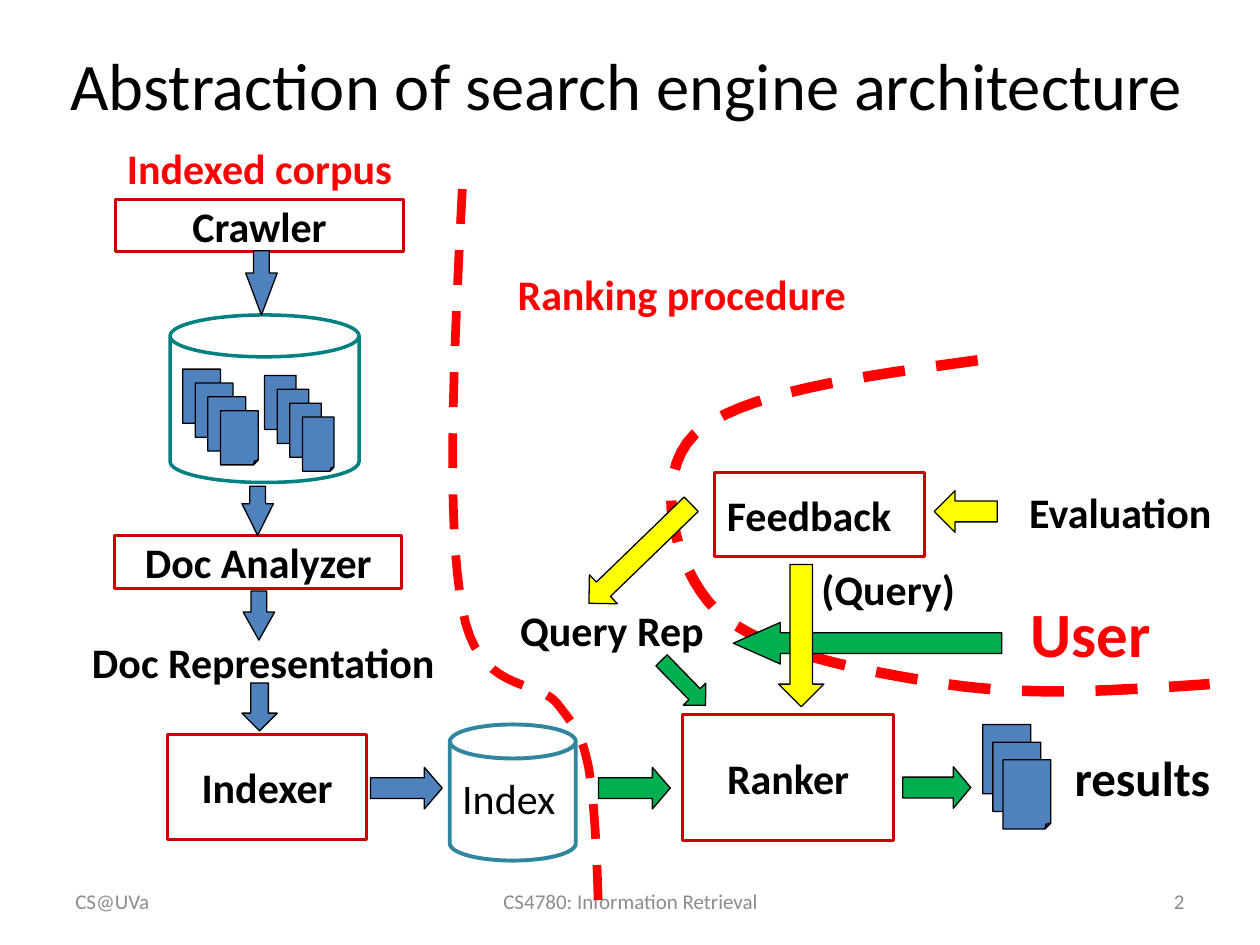
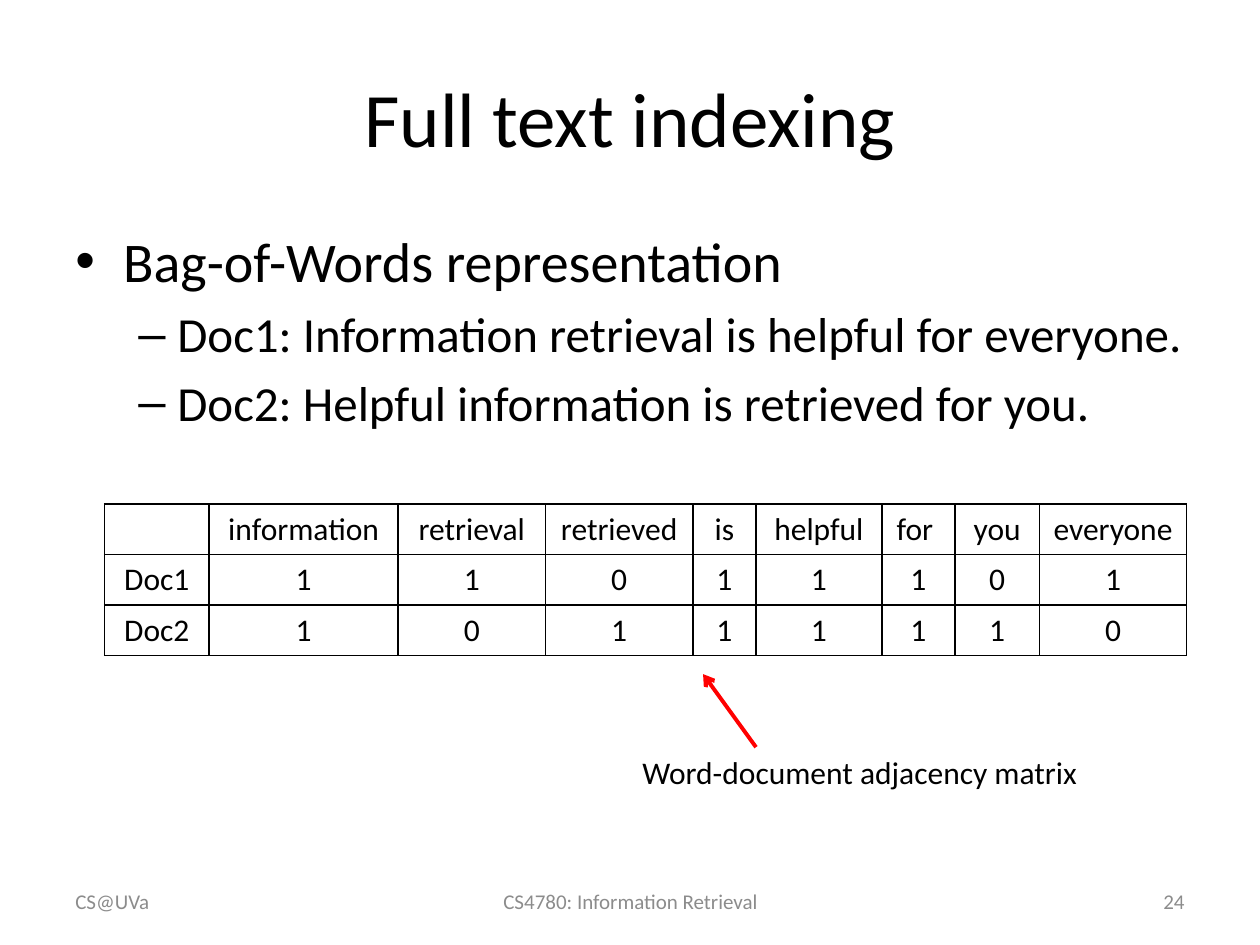
import pptx
import pptx.dml.color
import pptx.enum.dml
import pptx.enum.shapes
import pptx.enum.text
import pptx.oxml
import pptx.oxml.ns
import pptx.util
from lxml import etree

Inches = pptx.util.Inches
Pt = pptx.util.Pt
RGB = pptx.dml.color.RGBColor
SHAPE = pptx.enum.shapes.MSO_SHAPE
ALIGN = pptx.enum.text.PP_ALIGN
ANCHOR = pptx.enum.text.MSO_ANCHOR
qn = pptx.oxml.ns.qn

BLACK = RGB(0x00, 0x00, 0x00)
RED = RGB(0xFF, 0x00, 0x00)
BOX_RED = RGB(0xCC, 0x00, 0x00)
BLUE = RGB(0x4F, 0x81, 0xBD)
GREEN = RGB(0x00, 0xB0, 0x50)
YELLOW = RGB(0xFF, 0xFF, 0x00)
TEAL = RGB(0x00, 0x80, 0x80)
AQUA = RGB(0x31, 0x85, 0x9C)
GRAY = RGB(0x8C, 0x8C, 0x8C)
FONT = "Calibri"


def add_run(p, text, size, color=BLACK, bold=False):
    r = p.add_run()
    r.text = text
    r.font.name = FONT
    r.font.size = Pt(size)
    r.font.bold = bold
    r.font.color.rgb = color


class Region:
    """Places parts on a slide relative to a left top corner."""

    def __init__(self, s, left=0, top=0):
        self.s, self.left, self.top = s, left, top

    def place(self, box):
        x, y, w, h = box
        return Inches(self.left + x), Inches(self.top + y), Inches(w), Inches(h)

    def text(self, text, box, size=24, color=BLACK, bold=True,
             align=ALIGN.LEFT, anchor=ANCHOR.TOP, wrap=True):
        tf = self.s.shapes.add_textbox(*self.place(box)).text_frame
        tf.word_wrap = wrap
        tf.vertical_anchor = anchor
        p = tf.paragraphs[0]
        p.alignment = align
        add_run(p, text, size, color, bold)

    def shape(self, kind, box, fill=None, line=BLACK, width=0.75):
        sp = self.s.shapes.add_shape(kind, *self.place(box))
        sp.shadow.inherit = False
        if fill is None:
            sp.fill.background()
        else:
            sp.fill.solid()
            sp.fill.fore_color.rgb = fill
        sp.line.color.rgb = line
        sp.line.width = Pt(width)
        return sp

    def step(self, label, box, align=ALIGN.CENTER):
        sp = self.shape(SHAPE.RECTANGLE, box, line=BOX_RED, width=1.75)
        tf = sp.text_frame
        tf.word_wrap = False
        tf.vertical_anchor = ANCHOR.MIDDLE
        p = tf.paragraphs[0]
        p.alignment = align
        add_run(p, label, 24, bold=True)

    def arrow(self, box, fill=BLUE, rotation=0, head=0.5):
        sp = self.shape(SHAPE.DOWN_ARROW, box, fill)
        sp.adjustments[0], sp.adjustments[1] = 0.5, head
        sp.rotation = rotation

    def pages(self, count, box, dx, dy):
        x, y, w, h = box
        for i in range(count):
            sp = self.shape(SHAPE.FOLDED_CORNER, (x + i * dx, y + i * dy, w, h), BLUE)
            # python-pptx knows no adjustment for this shape
            guides = sp._element.spPr.find(qn("a:prstGeom")).find(qn("a:avLst"))
            etree.SubElement(guides, qn("a:gd"), name="adj", fmla="val 12500")

    def divider(self, start, curves, width):
        """Dashed line through cubic curves, each two controls and an end."""
        points, p0 = [], start
        for p1, p2, p3 in curves:
            for i in range(1, 17):
                t = i / 16
                u = 1 - t
                points.append(tuple(
                    Inches(u**3 * a + 3 * u * u * t * b + 3 * u * t * t * c + t**3 * d)
                    for a, b, c, d in zip(p0, p1, p2, p3)))
            p0 = p3
        fb = self.s.shapes.build_freeform(Inches(start[0]), Inches(start[1]))
        fb.add_line_segments(points, close=False)
        sp = fb.convert_to_shape(Inches(self.left), Inches(self.top))
        sp.shadow.inherit = False
        sp.fill.background()
        sp.line.color.rgb = RED
        sp.line.width = Pt(width)
        sp.line.dash_style = pptx.enum.dml.MSO_LINE.DASH


def add_slide(prs, title, title_box, title_size, number):
    s = prs.slides.add_slide(prs.slide_layouts[6])
    page = Region(s)
    page.text(title, title_box, title_size, bold=False,
              align=ALIGN.CENTER, anchor=ANCHOR.MIDDLE)
    # Footer
    for text, x, w, align in (("CS@UVa", 0.5, 2.33, ALIGN.LEFT),
                              ("CS4780: Information Retrieval", 3.42, 3.17, ALIGN.CENTER),
                              (str(number), 7.17, 2.33, ALIGN.RIGHT)):
        page.text(text, (x, 6.95, w, 0.4), 12, GRAY, False, align, ANCHOR.MIDDLE)
    return s


def indexed_corpus(s, left, top):
    rg = Region(s, left, top)
    rg.text("Indexed corpus", (0.49, 0, 2.67, 0.5), color=RED)
    rg.step("Crawler", (0.5, 0.5, 2.28, 0.42))
    # Document store
    rg.shape(SHAPE.CAN, (0.93, 1.42, 1.5, 1.33), line=TEAL, width=2)
    rg.pages(4, (1.03, 1.85, 0.3, 0.43), 0.1, 0.11)
    rg.pages(4, (1.68, 1.9, 0.25, 0.43), 0.1, 0.11)
    rg.arrow((1.53, 0.91, 0.25, 0.51), head=1.33)
    # Analysis and indexing
    rg.step("Doc Analyzer", (0.49, 3.17, 2.28, 0.42))
    rg.text("Doc Representation", (0, 3.92, 3.34, 0.5), align=ALIGN.CENTER)
    rg.arrow((1.5, 2.78, 0.25, 0.39), head=1.01)
    rg.arrow((1.51, 3.61, 0.25, 0.39), head=0.89)
    rg.arrow((1.5, 4.34, 0.28, 0.38))
    rg.step("Indexer", (0.91, 4.75, 1.58, 0.83))
    rg.arrow((2.64, 4.89, 0.33, 0.57), rotation=270, head=0.43)
    rg.shape(SHAPE.CAN, (3.15, 4.67, 1, 1.08), line=AQUA, width=2.25).adjustments[0] = 0.27
    rg.text("Index", (3.15, 5, 0.96, 0.5), bold=False, wrap=False)


def ranking_procedure(s, left, top):
    rg = Region(s, left, top)
    rg.text("Ranking procedure", (0, 0, 3.01, 0.5), color=RED)
    rg.step("Ranker", (1.41, 3.59, 1.67, 1))
    rg.arrow((1.29, 3.09, 0.25, 0.5), GREEN, 315.7)
    rg.arrow((0.86, 3.89, 0.33, 0.57), GREEN, 270, 0.43)
    rg.arrow((3.26, 3.9, 0.33, 0.54), GREEN, 270, 0.42)
    rg.pages(3, (3.79, 3.67, 0.38, 0.55), 0.08, 0.14)
    rg.text("results", (4.42, 3.8, 1.3, 0.57), 28, wrap=False)


def dividers(s, left, top):
    rg = Region(s, left, top)
    # Between corpus and ranking
    rg.divider((0.13, 0), [((0.06, 1.33), (0, 2.65), (0.13, 3.33)),
                           ((0.25, 4.01), (0.71, 3.88), (0.88, 4.08)),
                           ((1.04, 4.29), (1.07, 4.31), (1.13, 4.58)),
                           ((1.18, 4.86), (1.2, 5.31), (1.21, 5.75))], 5)
    # Between ranking and user
    rg.divider((4.22, 1.36), [((3.27, 1.49), (2.32, 1.62), (1.97, 1.95)),
                              ((1.63, 2.28), (1.81, 3.01), (2.14, 3.34)),
                              ((2.47, 3.67), (3.32, 3.83), (3.97, 3.93)),
                              ((4.63, 4.03), (5.34, 3.98), (6.06, 3.93))], 6)


def user_interaction(s, left, top):
    rg = Region(s, left, top)
    # Query
    rg.text("User", (4.05, 0.92, 1.56, 0.7), 36, RED)
    rg.text("Query Rep", (0, 1, 2.22, 0.5))
    rg.arrow((2.69, 0.29, 0.33, 2.13), GREEN, 90, 1.13)
    rg.text("(Query)", (2.39, 0.67, 2.22, 0.5))
    # Feedback
    rg.text("Evaluation", (4.04, 0.06, 1.67, 0.51), wrap=False)
    rg.step("Feedback", (1.64, 0, 1.67, 0.67), ALIGN.LEFT)
    rg.arrow((3.47, 0.06, 0.33, 0.5), YELLOW, 90)
    rg.arrow((2.15, 0.73, 0.36, 1.13), YELLOW)
    rg.arrow((0.89, 0.08, 0.32, 1.13), YELLOW, 45.9)


def bullet_list(s, left, top, items):
    sp = s.shapes.add_textbox(Inches(left), Inches(top), Inches(9), Inches(1.9))
    tf = sp.text_frame
    tf.word_wrap = True
    styles = (("•", 32, 0.38, -0.38), ("–", 28, 0.81, -0.31))
    for i, (level, text) in enumerate(items):
        mark, size, margin, indent = styles[level]
        p = tf.paragraphs[0] if i == 0 else tf.add_paragraph()
        p.level = level
        p.space_before = Pt(size * 0.2)
        pPr = p._p.get_or_add_pPr()
        pPr.set("marL", str(Inches(margin)))
        pPr.set("indent", str(Inches(indent)))
        etree.SubElement(pPr, qn("a:buFont"), typeface="Arial")
        etree.SubElement(pPr, qn("a:buChar"), char=mark)
        add_run(p, text, size)


def border_cell(cell):
    tcPr = cell._tc.get_or_add_tcPr()
    for side in "LRTB":
        ln = etree.SubElement(tcPr, qn("a:ln" + side), w=str(Pt(1)))
        fill = etree.SubElement(ln, qn("a:solidFill"))
        etree.SubElement(fill, qn("a:srgbClr"), val=str(BLACK))


def adjacency_matrix(s, left, top, rows):
    widths = (0.83, 1.5, 1.17, 1.17, 0.5, 1, 0.58, 0.67, 1.17)
    row_height = 0.4
    tbl = s.shapes.add_table(len(rows), len(widths), Inches(left), Inches(top),
                             Inches(sum(widths)), Inches(row_height * len(rows))).table
    tbl.first_row = tbl.horz_banding = False
    for col, width in zip(tbl.columns, widths):
        col.width = Inches(width)
    for i, row in enumerate(rows):
        tbl.rows[i].height = Inches(row_height)
        for j, value in enumerate(row):
            cell = tbl.cell(i, j)
            border_cell(cell)
            cell.fill.background()
            p = cell.text_frame.paragraphs[0]
            p.alignment = ALIGN.CENTER
            if value:
                add_run(p, value, 18)


def matrix_caption(s, left, top):
    Region(s, left, top).text("Word-document adjacency matrix",
                              (0, 0.58, 3.92, 0.4), 18, bold=False)
    line = s.shapes.add_connector(pptx.enum.shapes.MSO_CONNECTOR.STRAIGHT,
                                  Inches(left + 1), Inches(top + 0.58),
                                  Inches(left + 0.58), Inches(top))
    line.line.color.rgb = RED
    line.line.width = Pt(2.25)
    spPr = line._element.spPr
    etree.SubElement(spPr.find(qn("a:ln")), qn("a:tailEnd"), type="arrow")
    etree.SubElement(spPr, qn("a:effectLst"))


def architecture_slide(prs):
    s = add_slide(prs, "Abstraction of search engine architecture",
                  (0.08, 0.08, 9.79, 1.17), 38, 2)
    indexed_corpus(s, 0.42, 1.08)
    ranking_procedure(s, 4.01, 2.08)
    dividers(s, 3.54, 1.5)
    user_interaction(s, 4.03, 3.75)


def indexing_slide(prs):
    s = add_slide(prs, "Full text indexing", (0.5, 0.3, 9, 1.25), 44, 24)
    bullet_list(s, 0.5, 1.75, (
        (0, "Bag-of-Words representation"),
        (1, "Doc1: Information retrieval is helpful for everyone."),
        (1, "Doc2: Helpful information is retrieved for you.")))
    adjacency_matrix(s, 0.83, 4, (
        ("", "information", "retrieval", "retrieved", "is", "helpful",
         "for ", "you", "everyone"),
        ("Doc1", *"11011101"),
        ("Doc2", *"10111110")))
    matrix_caption(s, 5, 5.35)


def main():
    prs = pptx.Presentation()
    prs.slide_width, prs.slide_height = Inches(10), Inches(7.5)
    architecture_slide(prs)
    indexing_slide(prs)
    prs.save("out.pptx")


if __name__ == "__main__":
    main()
